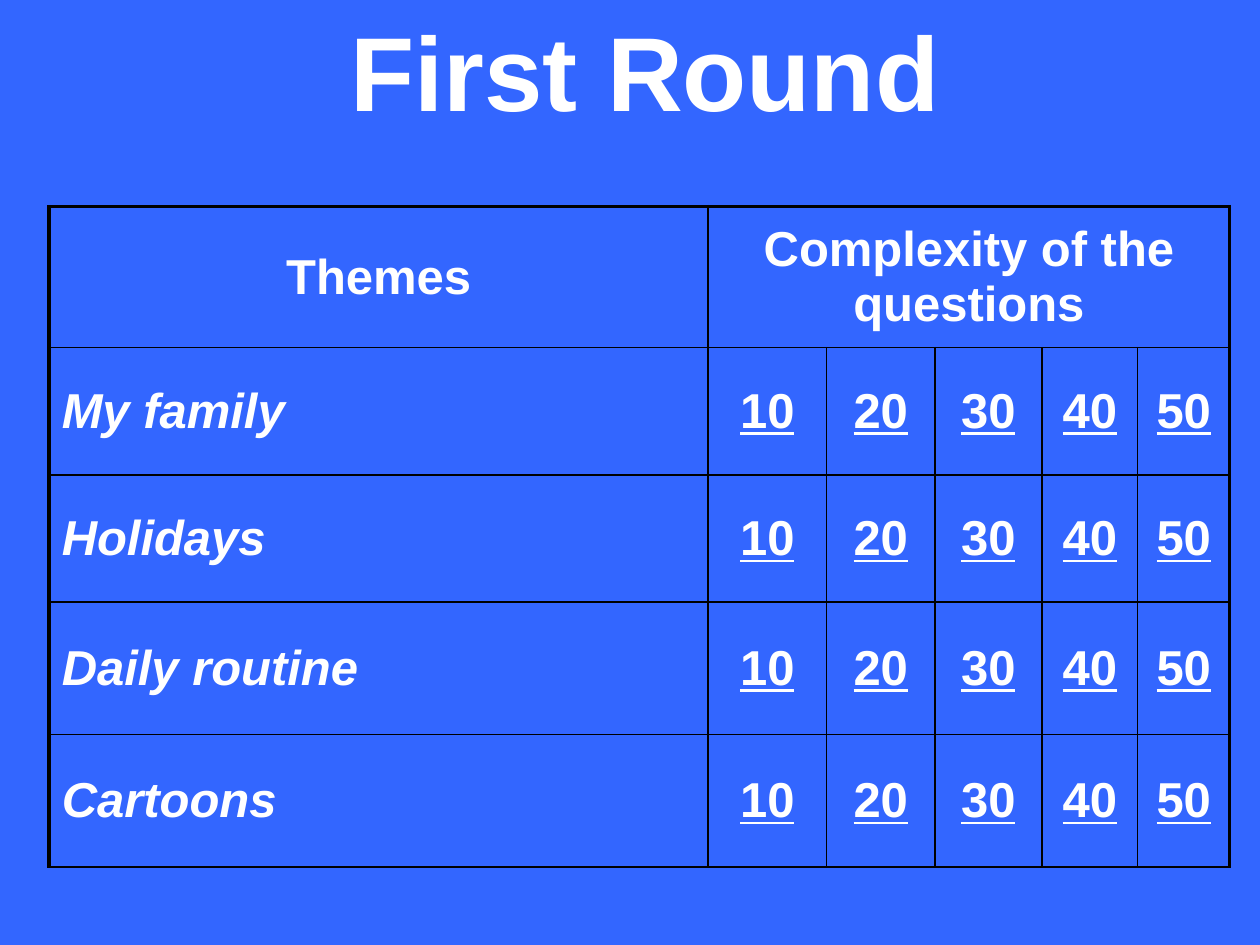
from lxml import etree
from pptx import Presentation
from pptx.dml.color import RGBColor
from pptx.enum import text as t
from pptx.oxml.ns import qn
from pptx.util import Inches, Pt

TITLE = "First Round"
HEADS = ["Themes", "Complexity of the questions"]
THEMES = ["My family", "Holidays", "Daily routine", "Cartoons"]
POINTS = ["10", "20", "30", "40", "50"]

COLS = [5.23, 0.94, 0.86, 0.85, 0.76, 0.73]
ROWS = [1.12, 1.01, 1.01, 1.05, 1.05]
LEFT, TOP = 0.39, 1.64
THICK, THIN = 2.25, 1
COLORS = {"back": "3366FF", "text": "FFFFFF", "line": "000000"}


def style(para, size, align=t.PP_ALIGN.CENTER):
    para.alignment = align
    font = para.font
    font.name, font.size, font.bold = "Arial", Pt(size), True
    font.color.rgb = RGBColor.from_string(COLORS["text"])
    return font


def edge(cell, side, width):
    """Draw one border of a cell; side is L, R, T or B."""
    props = cell._tc.get_or_add_tcPr()
    line = etree.SubElement(props, qn(f"a:ln{side}"), w=str(Pt(width)))
    fill = etree.SubElement(line, qn("a:solidFill"))
    etree.SubElement(fill, qn("a:srgbClr"), val=COLORS["line"])


def add_title(slide):
    title = slide.shapes.title
    title.left, title.top = Inches(1.8), Inches(0)
    title.width, title.height = Inches(6.64), Inches(1.11)
    title.text_frame.vertical_anchor = t.MSO_ANCHOR.MIDDLE
    title.text_frame.text = TITLE
    style(title.text_frame.paragraphs[0], 60)


def add_board(slide):
    table = slide.shapes.add_table(
        len(ROWS), len(COLS), Inches(LEFT), Inches(TOP),
        Inches(sum(COLS)), Inches(sum(ROWS))).table
    table.first_row = table.horz_banding = False
    for col, width in zip(table.columns, COLS):
        col.width = Inches(width)
    for row, height in zip(table.rows, ROWS):
        row.height = Inches(height)
    table.cell(0, 1).merge(table.cell(0, len(COLS) - 1))

    words = [HEADS] + [[theme] + POINTS for theme in THEMES]
    for r in range(len(ROWS)):
        for c in range(len(COLS)):
            cell = table.cell(r, c)
            last = c == len(COLS) - 1 or cell.is_merge_origin
            edge(cell, "L", THIN if c else THICK)
            edge(cell, "R", THICK if last else THIN)
            edge(cell, "T", THIN if r else THICK)
            edge(cell, "B", THIN)
            cell.fill.background()
            if cell.is_spanned:
                continue
            cell.vertical_anchor = t.MSO_ANCHOR.MIDDLE
            cell.text = words[r][c]
            theme = r > 0 and c == 0
            align = t.PP_ALIGN.LEFT if theme else t.PP_ALIGN.CENTER
            font = style(cell.text_frame.paragraphs[0], 28, align)
            font.italic = theme
            font.underline = r > 0 and c > 0


def main():
    deck = Presentation()
    deck.slide_width, deck.slide_height = Inches(10), Inches(7.5)
    slide = deck.slides.add_slide(deck.slide_layouts[5])
    slide.background.fill.solid()
    slide.background.fill.fore_color.rgb = RGBColor.from_string(COLORS["back"])
    add_board(slide)
    add_title(slide)
    deck.save("out.pptx")


if __name__ == "__main__":
    main()
